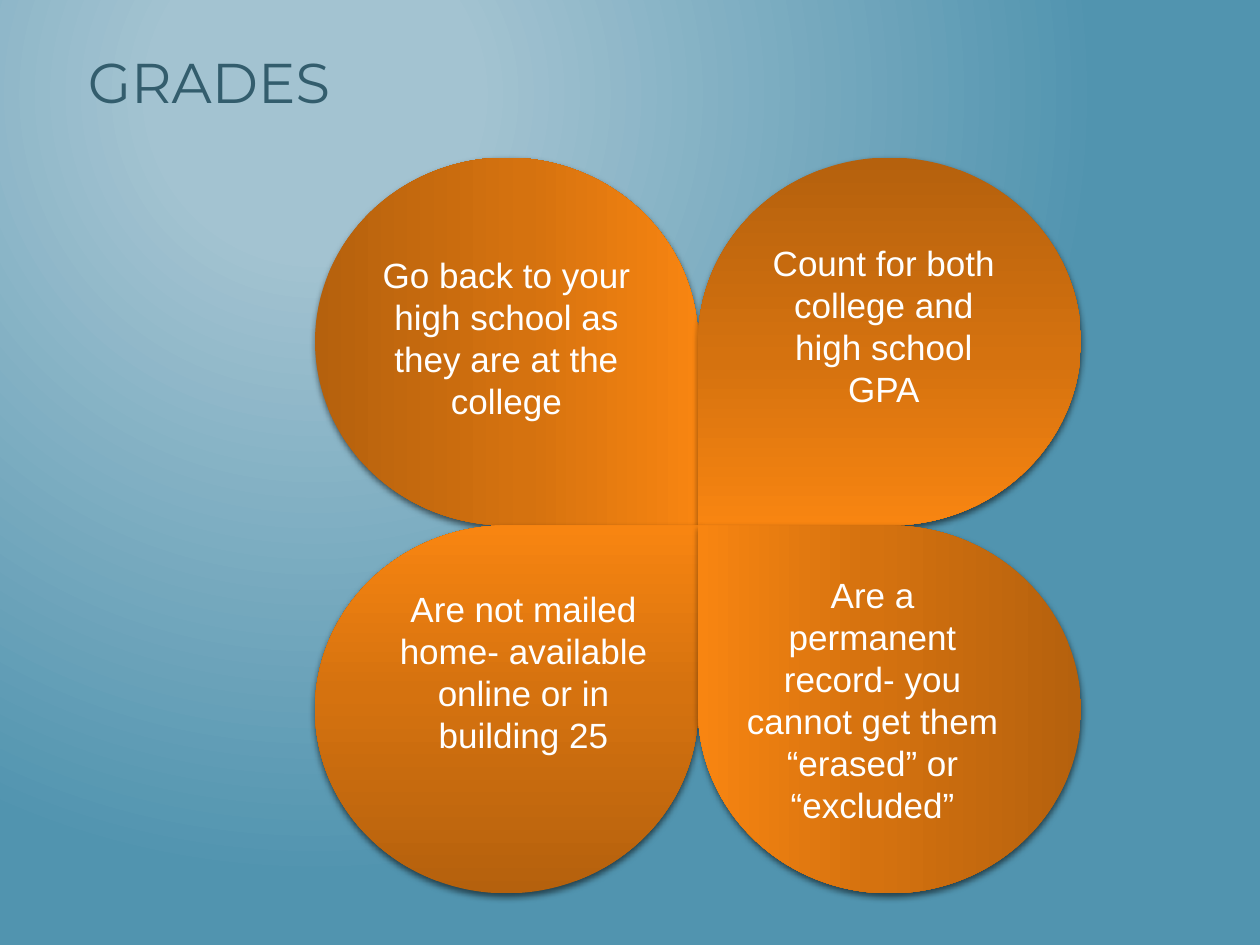
import pptx
import pptx.dml.color
import pptx.enum.shapes
import pptx.enum.text
import pptx.oxml
import pptx.oxml.ns
import pptx.util
from pptx.util import Inches

TITLE = "GRADES"
TITLE_BOX = (0.6, 0.33, 6.23, 0.63)
BACKGROUND_STOPS = [(20, "A3C3D1"), (100, "5194AF")]
PETAL_STOPS = [(0, "B5610D"), (55, "D5720F"), (100, "F88511")]
CENTER_X, CENTER_Y = 5.54, 4.17
PETAL_WIDTH, PETAL_HEIGHT = 3.04, 2.92

# column side, row side, rotation, text box, text
PETALS = [
    (-1, -1, 90, (2.87, 1.96, 2.3, 1.89),
     "Go back to your high school as they are at the college"),
    (1, -1, 180, (6, 1.87, 2.03, 1.54),
     "Count for both college and high school GPA"),
    (-1, 1, 0, (3.05, 4.61, 2.21, 1.89),
     "Are not mailed home- available online or in building 25"),
    (1, 1, 270, (5.82, 4.5, 2.21, 2.12),
     "Are a permanent record- you cannot get them “erased” or “excluded”"),
]

NAMESPACE = pptx.oxml.ns.nsdecls("a")
LINEAR_UP = '<a:lin ang="16200000" scaled="0"/>'
CIRCLE = ('<a:path path="circle"><a:fillToRect l="50000" t="20000" '
          'r="100000" b="100000"/></a:path>')
SHADOW = (f'<a:outerShdw {NAMESPACE} blurRad="50800" dist="25400" dir="5400000" '
          'rotWithShape="0"><a:srgbClr val="000000"><a:alpha val="55000"/>'
          '</a:srgbClr></a:outerShdw>')


def color(value):
    return pptx.dml.color.RGBColor.from_string(value)


def set_gradient(fill, properties, stops, direction):
    """Fill the owner of the properties element with a gradient."""
    fill.solid()
    solid = properties.find(pptx.oxml.ns.qn("a:solidFill"))
    stop_list = "".join(
        f'<a:gs pos="{position * 1000}"><a:srgbClr val="{value}"/></a:gs>'
        for position, value in stops)
    properties.replace(solid, pptx.oxml.parse_xml(
        f'<a:gradFill {NAMESPACE} rotWithShape="1"><a:gsLst>{stop_list}</a:gsLst>'
        f'{direction}</a:gradFill>'))


def add_text(shapes, box, text, font_name, size, font_color):
    frame = shapes.add_textbox(*map(Inches, box)).text_frame
    frame.word_wrap = True
    paragraph = frame.paragraphs[0]
    paragraph.text = text
    paragraph.font.name = font_name
    paragraph.font.size = pptx.util.Pt(size)
    paragraph.font.color.rgb = color(font_color)
    return frame


def add_petal(shapes, column, row, rotation):
    """Add a teardrop whose tip touches the centre of the clover."""
    width, height = PETAL_WIDTH, PETAL_HEIGHT
    middle_x = CENTER_X + column * width / 2
    middle_y = CENTER_Y + row * height / 2
    if rotation % 180:
        width, height = height, width
    petal = shapes.add_shape(
        pptx.enum.shapes.MSO_SHAPE.TEAR,
        Inches(middle_x - width / 2), Inches(middle_y - height / 2),
        Inches(width), Inches(height))
    petal.rotation = rotation
    properties = petal.element.spPr
    set_gradient(petal.fill, properties, PETAL_STOPS, LINEAR_UP)
    petal.line.fill.background()
    petal.shadow.inherit = False
    effects = properties.find(pptx.oxml.ns.qn("a:effectLst"))
    effects.append(pptx.oxml.parse_xml(SHADOW))


def main():
    presentation = pptx.Presentation()
    presentation.slide_width = Inches(10)
    presentation.slide_height = Inches(7.5)
    slide = presentation.slides.add_slide(presentation.slide_layouts[6])

    background_fill = slide.background.fill
    background_fill.solid()
    background = slide.element.find(".//" + pptx.oxml.ns.qn("p:bgPr"))
    set_gradient(background_fill, background, BACKGROUND_STOPS, CIRCLE)

    title = add_text(slide.shapes, TITLE_BOX, TITLE, "Montserrat", 32, "335D6D")
    title.vertical_anchor = pptx.enum.text.MSO_ANCHOR.MIDDLE

    for column, row, rotation, box, text in PETALS:
        group = slide.shapes.add_group_shape()
        add_petal(group.shapes, column, row, rotation)
        label = add_text(group.shapes, box, text, "Arial", 20, "FFFFFF")
        label.auto_size = pptx.enum.text.MSO_AUTO_SIZE.SHAPE_TO_FIT_TEXT
        label.paragraphs[0].alignment = pptx.enum.text.PP_ALIGN.CENTER

    presentation.save("out.pptx")


if __name__ == "__main__":
    main()
